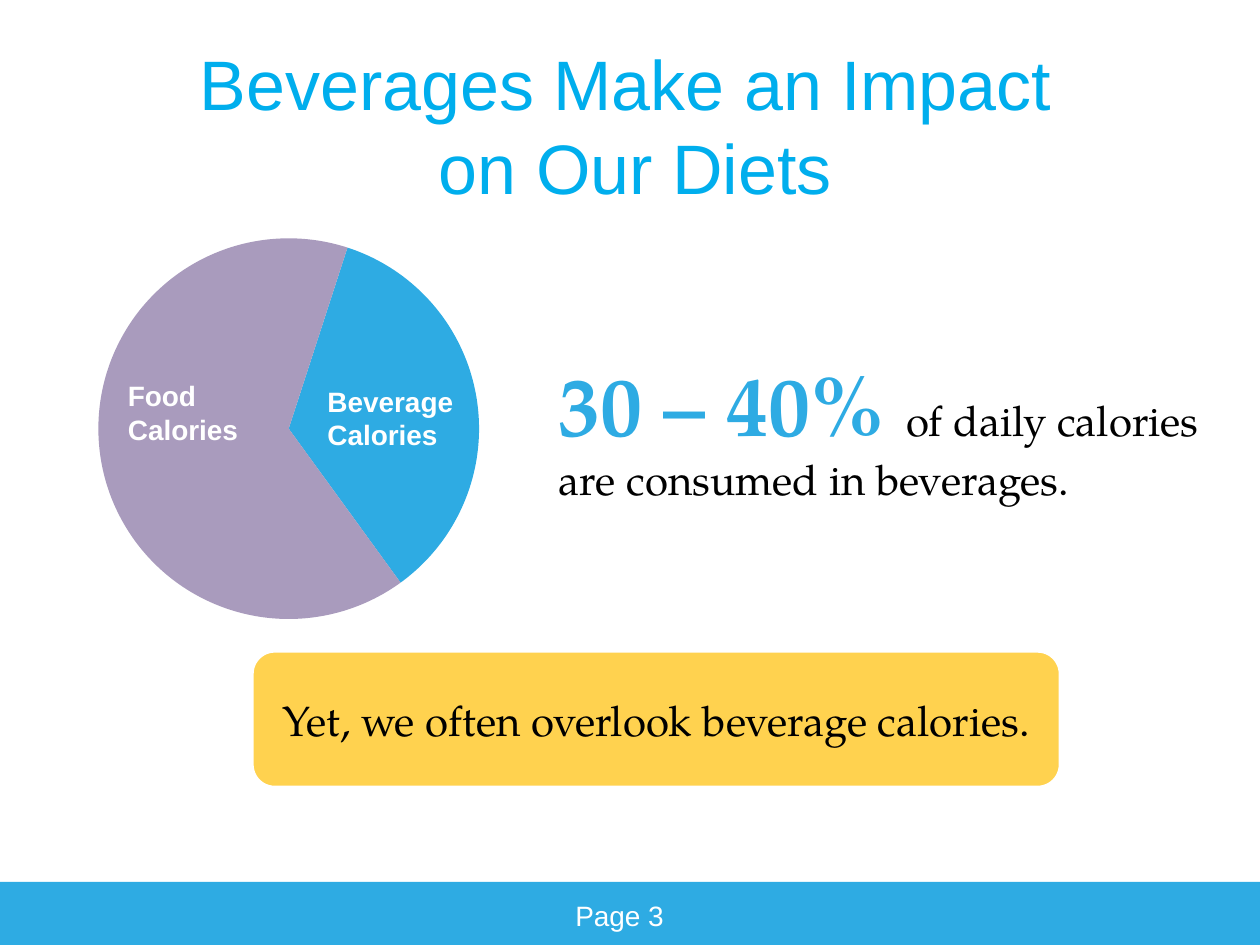
from lxml.etree import fromstring
from pptx import Presentation
from pptx.chart.data import CategoryChartData
from pptx.dml.color import RGBColor
from pptx.enum.chart import XL_CHART_TYPE
from pptx.enum.shapes import MSO_SHAPE
from pptx.enum.text import MSO_ANCHOR, PP_ALIGN
from pptx.util import Pt

BLUE = RGBColor(0x2E, 0xAB, 0xE3)
CYAN = RGBColor(0x00, 0xAE, 0xED)
PURPLE = RGBColor(0xA9, 0x9B, 0xBD)
YELLOW = RGBColor(0xFF, 0xD2, 0x4F)
WHITE = RGBColor(0xFF, 0xFF, 0xFF)
BLACK = RGBColor(0x00, 0x00, 0x00)
SANS = "Arial"
SERIF = "TeX Gyre Pagella"


def style(font, name, size, color, bold=False):
    font.name = name
    font.size = Pt(size)
    font.color.rgb = color
    font.bold = bold


def add_text(x, y, w, h, text):
    frame = slide.shapes.add_textbox(Pt(x), Pt(y), Pt(w), Pt(h)).text_frame
    frame.word_wrap = True
    frame.text = text
    return frame.paragraphs[0]


prs = Presentation()
prs.slide_width = Pt(720)
prs.slide_height = Pt(540)
slide = prs.slides.add_slide(prs.slide_layouts[5])

bar = slide.shapes.add_shape(MSO_SHAPE.RECTANGLE, 0, Pt(504), Pt(720), Pt(36))
bar.shadow.inherit = False
bar.fill.solid()
bar.fill.fore_color.rgb = BLUE
bar.line.fill.background()

title = slide.shapes.title
title.left, title.top, title.width, title.height = Pt(66), Pt(21.6), Pt(594), Pt(99)
frame = title.text_frame
frame.text = "Beverages Make an Impact \von Our Diets"
frame.vertical_anchor = MSO_ANCHOR.MIDDLE
head = frame.paragraphs[0]
head.alignment = PP_ALIGN.CENTER
for run in head.runs:
    style(run.font, SANS, 40, CYAN)

fact = add_text(312, 198, 390, 117, "30 – 40% ")
style(fact.runs[0].font, SERIF, 48, BLUE, True)
rest = fact.add_run()
rest.text = "of daily calories are consumed in beverages."
style(rest.font, SERIF, 24, BLACK)

data = CategoryChartData()
data.categories = ["1", "2"]
data.add_series("Series 1", (35, 65))
chart = slide.shapes.add_chart(
    XL_CHART_TYPE.PIE, Pt(18), Pt(126), Pt(294), Pt(238), data).chart
chart.has_title = False
chart.has_legend = False
style(chart.font, "Calibri", 18, BLACK)
pie = chart.plots[0]
pie.vary_by_categories = False
for i, color in enumerate((BLUE, PURPLE)):
    fill = pie.series[0].points[i].format.fill
    fill.solid()
    fill.fore_color.rgb = color
NS = "http://schemas.openxmlformats.org/drawingml/2006/chart"
pie._element.append(fromstring(f'<c:firstSliceAng xmlns:c="{NS}" val="18"/>'))
area = pie._element.getparent()
for old in area.findall(f"{{{NS}}}layout"):
    area.remove(old)
area.insert(0, fromstring(
    f'<c:layout xmlns:c="{NS}"><c:manualLayout><c:layoutTarget val="inner"/>'
    '<c:xMode val="edge"/><c:yMode val="edge"/><c:x val="0.13"/><c:y val="0.04"/>'
    '<c:w val="0.74"/><c:h val="0.92"/></c:manualLayout></c:layout>'))

for x, y, text in ((180, 216, "Beverage Calories"), (66, 213, "Food Calories")):
    label = add_text(x, y, 120, 46, text)
    style(label.runs[0].font, SANS, 16, WHITE, True)

note = slide.shapes.add_shape(
    MSO_SHAPE.ROUNDED_RECTANGLE, Pt(144), Pt(372), Pt(462), Pt(78))
note.shadow.inherit = False
note.fill.solid()
note.fill.fore_color.rgb = YELLOW
note.line.color.rgb = WHITE
note.line.width = Pt(2)
frame = note.text_frame
frame.text = "Yet, we often overlook beverage calories."
frame.vertical_anchor = MSO_ANCHOR.MIDDLE
frame.paragraphs[0].alignment = PP_ALIGN.CENTER
style(frame.paragraphs[0].runs[0].font, SERIF, 24, BLACK)

page = add_text(270, 510, 168, 26.6, "Page 3")
page.alignment = PP_ALIGN.CENTER
style(page.runs[0].font, SANS, 16, WHITE)

prs.save("out.pptx")
